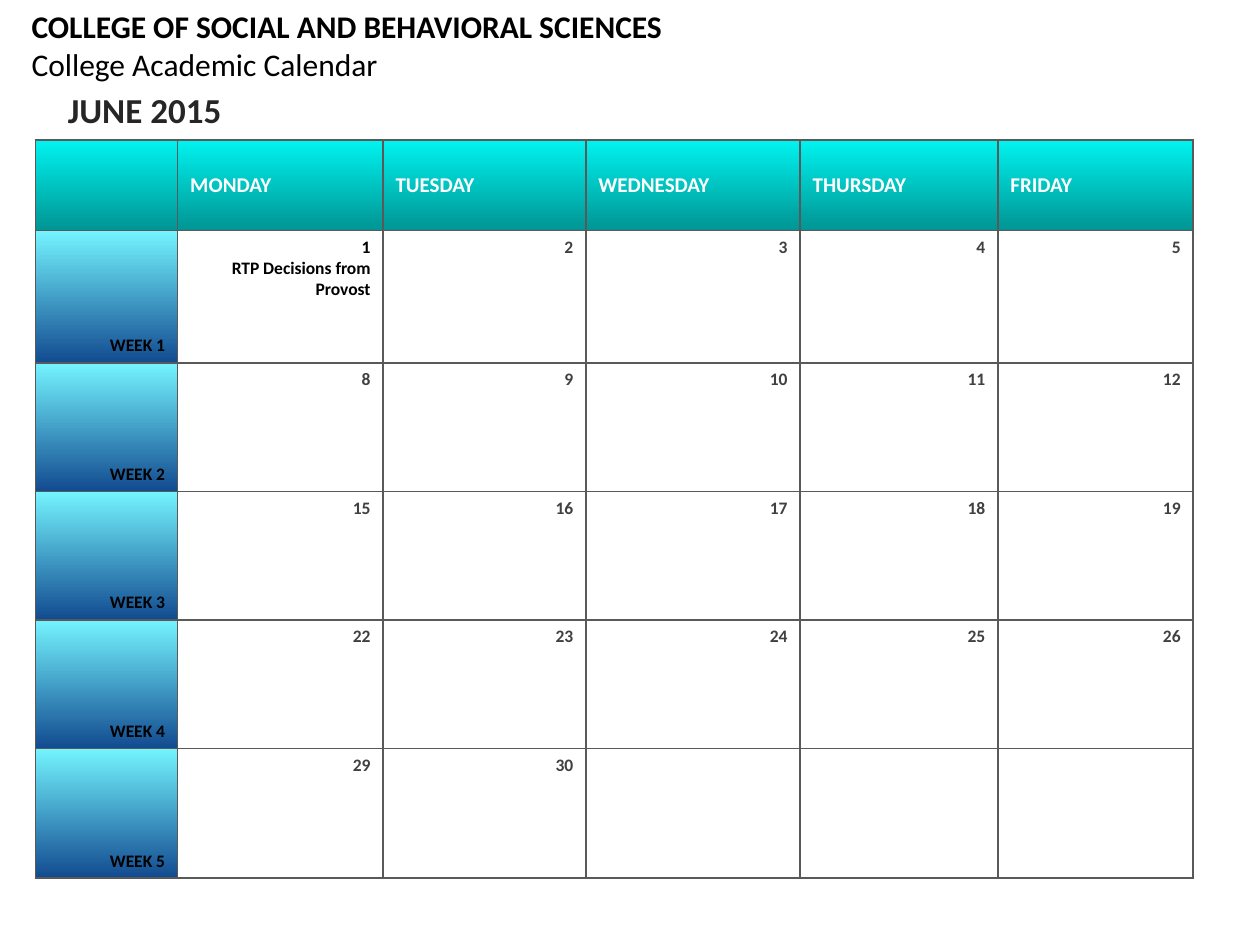
from pptx import Presentation
from pptx import util as u
from pptx.dml.color import RGBColor
from pptx.enum import text
from pptx.oxml import parse_xml
from pptx.oxml.ns import nsdecls

COLORS = {
    "white": "FFFFFF", "black": "000000", "title": "262626", "date": "404040",
    "border": "595959", "head_top": "00F3F0", "head_end": "009593",
    "week_top": "74F4FF", "week_end": "124B90",
}
COLUMNS = [1.13, 1.63, 1.61, 1.7, 1.57, 1.55]
ROWS = [0.72, 1.05, 1.02, 1.02, 1.02, 1.03]
DAYS = ["MONDAY", "TUESDAY", "WEDNESDAY", "THURSDAY", "FRIDAY"]
EVENTS = {1: "RTP Decisions from Provost"}
LAST_DATE = 30


def rgb(name):
    """Return the named palette colour."""
    return RGBColor.from_string(COLORS[name])


def write(tf, content, size=10, color="black", bold=True, align="LEFT", first=True):
    """Write one formatted paragraph into a text frame."""
    p = tf.paragraphs[0] if first else tf.add_paragraph()
    p.alignment = getattr(text.PP_ALIGN, align)
    r = p.add_run()
    r.text = content
    r.font.name = "Calibri"
    r.font.size = u.Pt(size)
    r.font.bold = bold
    r.font.color.rgb = rgb(color)


def add_box(s, left, top, width, height, wrap=True):
    """Add a text box and return its text frame."""
    tf = s.shapes.add_textbox(*map(u.Inches, (left, top, width, height))).text_frame
    tf.word_wrap = wrap
    return tf


def style_cell(cell, *fill):
    """Fill a cell with one colour or a downward gradient and outline it."""
    if len(fill) == 1:
        cell.fill.solid()
        cell.fill.fore_color.rgb = rgb(fill[0])
    else:
        cell.fill.gradient()
        cell.fill.gradient_angle = 270
        for stop, name in zip(cell.fill.gradient_stops, fill):
            stop.color.rgb = rgb(name)
    tc_pr = cell._tc.get_or_add_tcPr()
    for i, side in enumerate("LRTB"):
        tc_pr.insert(i, parse_xml(
            f'<a:ln{side} {nsdecls("a")} w="12700"><a:solidFill>'
            f'<a:srgbClr val="{COLORS["border"]}"/></a:solidFill></a:ln{side}>'))


def add_week(table, week):
    """Fill the row of one week with its label, dates and events."""
    label = table.cell(week, 0)
    style_cell(label, "week_top", "week_end")
    label.vertical_anchor = text.MSO_ANCHOR.BOTTOM
    write(label.text_frame, f"WEEK {week}", align="RIGHT")
    for col in range(1, len(COLUMNS)):
        cell = table.cell(week, col)
        style_cell(cell, "white")
        date = (week - 1) * 7 + col
        if date > LAST_DATE:
            continue
        color = "black" if date in EVENTS else "date"
        write(cell.text_frame, str(date), color=color, align="RIGHT")
        if date in EVENTS:
            write(cell.text_frame, EVENTS[date], align="RIGHT", first=False)


def add_calendar(s):
    """Add the month table with its weekday header and week rows."""
    table = s.shapes.add_table(
        len(ROWS), len(COLUMNS), u.Inches(0.28), u.Inches(1.11),
        u.Inches(sum(COLUMNS)), u.Inches(sum(ROWS))).table
    for column, width in zip(table.columns, COLUMNS):
        column.width = u.Inches(width)
    for row, height in zip(table.rows, ROWS):
        row.height = u.Inches(height)
    for col, day in enumerate([""] + DAYS):
        cell = table.cell(0, col)
        style_cell(cell, "head_top", "head_end")
        cell.vertical_anchor = text.MSO_ANCHOR.MIDDLE
        if day:
            write(cell.text_frame, day, size=12, color="white")
    for week in range(1, len(ROWS)):
        add_week(table, week)


def add_headings(s):
    """Add the month name and the college heading."""
    tf = add_box(s, 0.44, 0.65, 1.43, 0.44, wrap=False)
    write(tf, "JUNE 2015", size=20, color="title")
    tf = add_box(s, 0.25, 0.04, 5.02, 0.63)
    tf.margin_left = tf.margin_right = 0
    tf.vertical_anchor = text.MSO_ANCHOR.MIDDLE
    write(tf, "COLLEGE OF SOCIAL AND BEHAVIORAL SCIENCES", size=18)
    write(tf, "College Academic Calendar", size=18, bold=False, first=False)


def main():
    """Build the calendar slide and save it."""
    prs = Presentation()
    prs.slide_width, prs.slide_height = u.Inches(10), u.Inches(7.5)
    s = prs.slides.add_slide(prs.slide_layouts[6])
    add_calendar(s)
    add_headings(s)
    prs.save("out.pptx")


if __name__ == "__main__":
    main()
